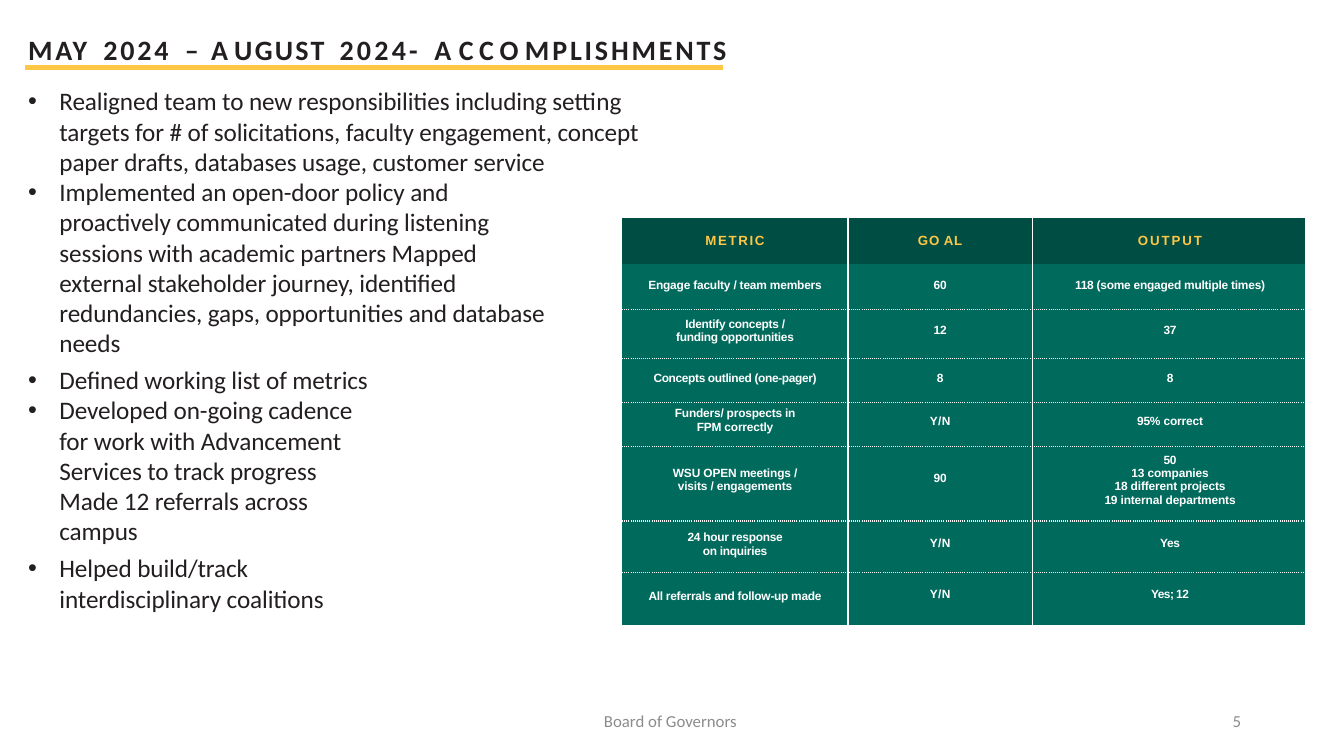
from lxml.etree import SubElement
from pptx import Presentation
from pptx.dml.color import RGBColor
from pptx.enum.shapes import MSO_CONNECTOR
from pptx.enum.text import MSO_ANCHOR, PP_ALIGN
from pptx.oxml.ns import qn
from pptx.util import Inches, Pt

INK = RGBColor(0x23, 0x1F, 0x20)
GOLD = RGBColor(0xFE, 0xC7, 0x46)
GRAY = RGBColor(0x8C, 0x8C, 0x8C)
WHITE = RGBColor(0xFF, 0xFF, 0xFF)
DARK_GREEN = RGBColor(0x00, 0x4D, 0x43)
GREEN = RGBColor(0x00, 0x6A, 0x5C)


def write_text(paragraph, text, size, color, font="Calibri", bold=False,
               spacing=0, align=PP_ALIGN.LEFT):
    """Add one run of text to a paragraph."""
    paragraph.alignment = align
    run = paragraph.add_run()
    run.text = text
    run.font.name = font
    run.font.size = Pt(size)
    run.font.bold = bold
    run.font.color.rgb = color
    run._r.get_or_add_rPr().set("spc", str(round(spacing * 100)))


def set_frame(shape, left, top, width, height, anchor=MSO_ANCHOR.TOP):
    """Place a text shape and clear its insets."""
    shape.left, shape.top = Inches(left), Inches(top)
    shape.width, shape.height = Inches(width), Inches(height)
    frame = shape.text_frame
    frame.word_wrap = True
    frame.vertical_anchor = anchor
    frame.margin_left = frame.margin_right = frame.margin_bottom = 0
    frame.margin_top = Inches(0.01)
    return frame


presentation = Presentation()
presentation.slide_width = Inches(13.33)
presentation.slide_height = Inches(7.5)
slide = presentation.slides.add_slide(presentation.slide_layouts[5])

# Title, with its letter spacing
TITLE = [("MAY", 1.9), (" ", 5), ("2024", 2), (" ", 5), ("–", 0), (" ", 4.2),
         ("A ", -0.1), ("UGUST", 1.6), (" ", 4.6), ("2024-", 2.3), (" ", 5),
         ("A ", 0.4), ("C C ", -0.4), ("O ", 0), ("MPLISHMENTS", 2)]
title = set_frame(slide.shapes.title, 0.28, 0.31, 7.22, 0.35)
for text, spacing in TITLE:
    write_text(title.paragraphs[0], text, 20, INK, bold=True, spacing=spacing)

# Line under the title
rule = slide.shapes.add_connector(MSO_CONNECTOR.STRAIGHT, Inches(0.25),
                                  Inches(0.67), Inches(7.17), Inches(0.67))
rule.line.color.rgb = GOLD
rule.line.width = Pt(3.75)
SubElement(rule._element.spPr, qn("a:effectLst"))

# Accomplishments: text, right indent in inches, space before in points
ACCOMPLISHMENTS = [
    ("Realigned team to new responsibilities including setting targets for # of "
     "solicitations, faculty engagement, concept paper drafts, databases usage, "
     "customer service", 0, 0),
    ("Implemented an open-door policy and proactively communicated during "
     "listening sessions with academic partners Mapped external stakeholder "
     "journey, identified redundancies, gaps, opportunities and database needs",
     1, 0),
    ("Defined working list of metrics", 0, 4.8),
    ("Developed on-going cadence for work with Advancement Services to track "
     "progress Made 12 referrals across campus", 2.82, 0),
    ("Helped build/track interdisciplinary coalitions", 2.82, 4.8),
]
body = set_frame(slide.shapes.add_textbox(0, 0, 0, 0), 0.26, 0.84, 6.16, 4.7)
for index, (text, right_indent, space_before) in enumerate(ACCOMPLISHMENTS):
    paragraph = body.add_paragraph() if index else body.paragraphs[0]
    properties = paragraph._p.get_or_add_pPr()
    properties.set("marL", str(Inches(0.33)))
    properties.set("marR", str(Inches(right_indent)))
    properties.set("indent", str(Inches(-0.31)))
    SubElement(properties, qn("a:buFont"), typeface="Arial")
    SubElement(properties, qn("a:buChar"), char="•")
    paragraph.space_before = Pt(space_before)
    write_text(paragraph, text, 18, INK, spacing=-0.08)

# Metrics table: row height, side inset of the first cell,
# then text, top inset and letter spacing per cell
COLUMN_WIDTHS = [2.24, 1.83, 2.7, 0.31]
METRICS = [
    (0.46, 0, [("METRIC", 0.16, 1.2), ("GO AL", 0.16, 0.5),
               ("OUTPUT", 0.16, 1.4)]),
    (0.45, 0, [("Engage faculty / team members", 0.15, -0.15), ("60", 0.15, -0.2),
               ("118 (some engaged multiple times)", 0.15, -0.17)]),
    (0.49, 0.45, [("Identify concepts / funding opportunities", 0.08, -0.2),
                  ("12", 0.14, -0.2), ("37", 0.14, -0.2)]),
    (0.43, 0, [("Concepts outlined (one-pager)", 0.13, -0.25), ("8", 0.13, -0.5),
               ("8", 0.13, -0.5)]),
    (0.44, 0.45, [("Funders/ prospects in FPM correctly", 0.05, -0.15),
                  ("Y/N", 0.13, 0.3), ("95% correct", 0.13, -0.1)]),
    (0.74, 0.45, [("WSU OPEN meetings / visits / engagements", 0.2, -0.1),
                  ("90", 0.25, -0.2),
                  ("50\n13 companies\n18 different projects\n"
                   "19 internal departments", 0.07, -0.1)]),
    (0.51, 0.6, [("24 hour response on inquiries", 0.1, -0.2), ("Y/N", 0.16, 0.3),
                 ("Yes", 0.16, -0.2)]),
    (0.52, 0, [("All referrals and follow-up made", 0.17, -0.2),
               ("Y/N", 0.15, 0.3), ("Yes; 12", 0.15, -0.4)]),
]
last_row = len(METRICS) - 1
table = slide.shapes.add_table(
    len(METRICS), len(COLUMN_WIDTHS), Inches(6.17), Inches(2.16),
    Inches(sum(COLUMN_WIDTHS)), Inches(sum(row[0] for row in METRICS))).table
table.horz_banding = False
for column, width in zip(table.columns, COLUMN_WIDTHS):
    column.width = Inches(width)

for row_index, (height, side_inset, entries) in enumerate(METRICS):
    table.rows[row_index].height = Inches(height)
    is_header = row_index == 0
    for column_index in range(len(COLUMN_WIDTHS)):
        cell = table.cell(row_index, column_index)
        is_margin = column_index == len(entries)
        inset = Inches(side_inset if column_index == 0 else 0)
        cell.margin_left = cell.margin_right = inset
        cell.margin_top = cell.margin_bottom = 0
        cell.vertical_anchor = MSO_ANCHOR.TOP

        # Solid lines between columns, dotted lines between data rows
        borders = {
            "a:lnL": "solid" if 0 < column_index < len(entries) else None,
            "a:lnR": "solid" if column_index < len(entries) - 1 else None,
            "a:lnT": "sysDot" if row_index > 1 else None,
            "a:lnB": "sysDot" if 0 < row_index < last_row else None,
        }
        for tag, dash in borders.items():
            line = SubElement(cell._tc.get_or_add_tcPr(), qn(tag), w=str(Pt(1)))
            if dash:
                fill = SubElement(line, qn("a:solidFill"))
                SubElement(fill, qn("a:srgbClr"), val=str(WHITE))
                SubElement(line, qn("a:prstDash"), val=dash)
            else:
                SubElement(line, qn("a:noFill"))

        # The narrow last column stays blank
        if is_margin:
            cell.fill.background()
            continue
        cell.fill.solid()
        cell.fill.fore_color.rgb = DARK_GREEN if is_header else GREEN

        text, top_inset, spacing = entries[column_index]
        cell.margin_top = Inches(top_inset)
        if column_index == 2:
            cell.margin_left = Inches(0.03)
        for index, line_text in enumerate(text.split("\n")):
            frame = cell.text_frame
            paragraph = frame.add_paragraph() if index else frame.paragraphs[0]
            write_text(paragraph, line_text, 9.5 if is_header else 8.5,
                       GOLD if is_header else WHITE, font="Arial", bold=True,
                       spacing=spacing, align=PP_ALIGN.CENTER)
table.cell(0, 3).merge(table.cell(1, 3))

# Footer and page number
FOOTERS = [("Board of Governors", 4.4, 4.5, PP_ALIGN.CENTER),
           ("5", 9.41, 2.9, PP_ALIGN.RIGHT)]
for text, left, width, align in FOOTERS:
    footer = set_frame(slide.shapes.add_textbox(0, 0, 0, 0), left, 6.95, width, 0.4,
                       anchor=MSO_ANCHOR.MIDDLE)
    write_text(footer.paragraphs[0], text, 12, GRAY, align=align)

presentation.save("out.pptx")
